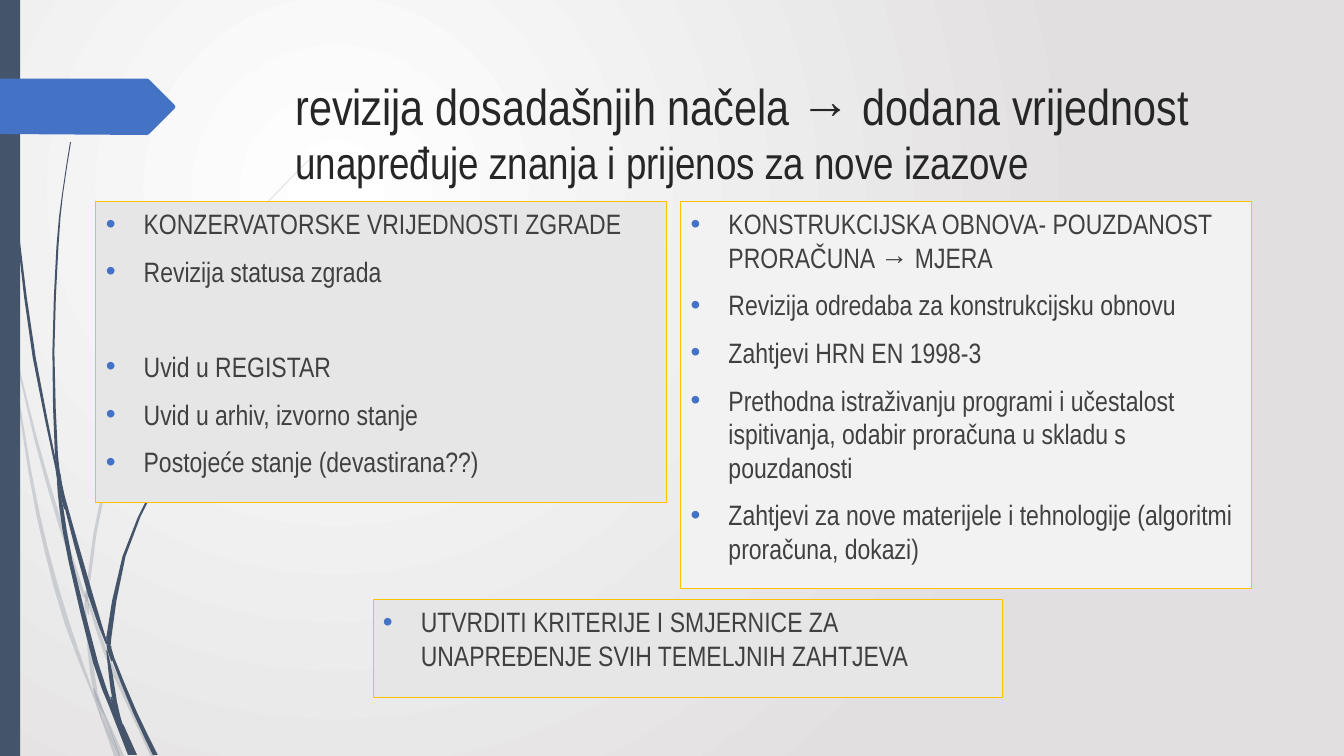
from lxml import etree
from pptx import Presentation
from pptx.dml.color import RGBColor
from pptx.enum import shapes, text
from pptx.oxml.ns import qn
from pptx.util import Inches, Pt

FONT = "Arial Narrow"
COLORS = {
    "navy": "44546A", "blue": "4472C4", "gold": "FFC000",
    "gray": "E7E6E6", "light": "F2F2F2", "title": "262626", "text": "404040",
    "center": "FFFFFF", "edge": "E1DFDF",
}
# Each blade of grass is a spine of (x, y, width) in inches.
PALE_BLADES = [
    [(0, 2.9, .04), (.07, 3.22, .03), (.11, 3.5, .01)],
    [(.14, 3.45, .01), (.35, 4.34, .03), (.6, 5.21, .04), (.84, 5.93, .03)],
    [(.88, 5.98, .02), (1.05, 6.48, .04), (1.25, 6.93, .04), (1.52, 7.51, .05)],
    [(1.05, 7.11, .01), (1.21, 7.51, .05)],
    [(.11, 3.5, .01), (.3, 4.7, .03), (.46, 5.46, .04), (.67, 6.2, .05),
     (.92, 6.88, .02), (1.01, 7.14, .01)],
    [(.84, 5.99, .01), (.89, 6.46, .04), (.95, 6.88, .04), (1.05, 7.11, .01)],
    [(3.12, 1.53, .01), (2.68, 1.98, .01), (2.28, 2.45, .01), (1.59, 3.49, .02),
     (1.08, 4.62, .03), (.87, 5.84, .03), (.88, 5.96, .01)],
    [(1.01, 7.14, .01), (1.16, 7.51, .05)],
    [(.85, 5.86, .01), (.86, 5.98, .04), (.88, 6.1, .01)],
    [(.93, 6.83, .01), (1.02, 7.1, .05), (1.19, 7.51, .01)],
]
DARK_BLADES = [
    [(.04, 0, .01), (.08, 1.1, .01), (.18, 2.33, .02), (.34, 3.55, .03),
     (.56, 4.65, .02), (.57, 4.81, .01)],
    [(.6, 4.72, .01), (.63, 4.93, .03), (.9, 5.91, .05), (1.06, 6.39, .02)],
    [(1.1, 6.41, .01), (1.12, 6.53, .03), (1.34, 7.07, .04), (1.54, 7.49, .05)],
    [(.57, 4.77, .01), (.61, 5.05, .04), (.7, 5.57, .04), (.95, 6.58, .05),
     (1.1, 7, .04), (1.17, 7.22, .01)],
    [(.7, 1.41, .01), (.62, 1.93, .01), (.57, 2.45, .02), (.53, 3.49, .02),
     (.56, 4.51, .03), (.6, 4.72, .01)],
    [(1.22, 7.19, .01), (1.34, 7.49, .04)],
    [(.55, 4.49, .01), (.59, 4.77, .04), (.64, 5.05, .01)],
    [(2.6, 3.44, .01), (2.31, 3.74, .01), (2.04, 4.06, .01), (1.57, 4.75, .02),
     (1.23, 5.52, .03), (1.08, 6.32, .05), (1.1, 6.41, .01)],
    [(1.17, 7.22, .01), (1.29, 7.49, .04)],
    [(1.06, 6.45, .01), (1.1, 6.7, .04), (1.14, 6.96, .04), (1.21, 7.19, .01)],
    [(1.06, 6.31, .01), (1.08, 6.43, .04), (1.11, 6.56, .01)],
    [(1.1, 6.91, .01), (1.19, 7.19, .06), (1.32, 7.49, .03)],
]
TAG = [(0, .78), (1.46, .78), (1.48, .79), (1.73, 1.04), (1.74, 1.06),
       (1.73, 1.08), (1.48, 1.33), (1.46, 1.34), (0, 1.33)]


def rgb(name):
    return RGBColor.from_string(COLORS[name])


def paint(sp, fill, line=None):
    sp.fill.solid()
    sp.fill.fore_color.rgb = rgb(fill)
    if line:
        sp.line.color.rgb = rgb(line)
        sp.line.width = Pt(0.75)
    else:
        sp.line.fill.background()


def place(sp, left, top, width, height):
    sp.left, sp.top = Inches(left), Inches(top)
    sp.width, sp.height = Inches(width), Inches(height)


def add_block(s, box, fill, line=None):
    sp = s.shapes.add_shape(shapes.MSO_SHAPE.RECTANGLE, *map(Inches, box))
    sp.shadow.inherit = False
    paint(sp, fill, line)
    return sp


def add_outline(s, points, fill):
    start, *rest = [(Inches(x), Inches(y)) for x, y in points]
    builder = s.shapes.build_freeform(*start)
    builder.add_line_segments(rest, close=True)
    sp = builder.convert_to_shape()
    sp.shadow.inherit = False
    paint(sp, fill)
    return sp


def add_run(p, words, size=20, color="text"):
    r = p.add_run()
    r.text = words
    r.font.name = FONT
    r.font.size = Pt(size)
    r.font.color.rgb = rgb(color)


def add_bullet(p):
    pPr = p._p.get_or_add_pPr()
    pPr.set("marL", str(Pt(27)))
    pPr.set("indent", str(-Pt(27)))
    clr = etree.SubElement(pPr, qn("a:buClr"))
    etree.SubElement(clr, qn("a:srgbClr"), val=COLORS["blue"])
    etree.SubElement(pPr, qn("a:buFont"), typeface="Arial")
    etree.SubElement(pPr, qn("a:buChar"), char="•")


def prepare_frame(sp):
    tf = sp.text_frame
    tf.word_wrap = True
    tf.auto_size = text.MSO_AUTO_SIZE.NONE
    tf.vertical_anchor = text.MSO_ANCHOR.TOP
    return tf


def fill_list(sp, items, gaps=None):
    """Write bulleted items; gaps maps an item index to its space before."""
    tf = prepare_frame(sp)
    for i, item in enumerate(items):
        p = tf.add_paragraph() if i else tf.paragraphs[0]
        add_bullet(p)
        p.alignment = text.PP_ALIGN.LEFT
        p.space_before = Pt((gaps or {}).get(i, 10) if i else 0)
        add_run(p, item)


def smooth(spine):
    """Add a Catmull-Rom midpoint between neighbours of the spine."""
    ends = [spine[0], *spine, spine[-1]]
    points = []
    for a, b, c, d in zip(ends, ends[1:], ends[2:], ends[3:]):
        points += [b, [(9 * (q + r) - p - w) / 16
                       for p, q, r, w in zip(a, b, c, d)]]
    return points + [spine[-1]]


def add_blade(s, spine, opacity=None):
    curve = smooth(spine)
    left = [(x - w / 2, y) for x, y, w in curve]
    right = [(x + w / 2, y) for x, y, w in reversed(curve)]
    sp = add_outline(s, left + right, "navy")
    if opacity:
        clr = sp._element.spPr.find(".//" + qn("a:srgbClr"))
        etree.SubElement(clr, qn("a:alpha"), val=str(opacity * 1000))


def set_background(s):
    fill = s.background.fill
    fill.gradient()
    for stop, name in zip(fill.gradient_stops, ("center", "edge")):
        stop.color.rgb = rgb(name)
    grad = s._element.find(".//" + qn("a:gradFill"))
    grad.remove(grad.find(qn("a:lin")))
    circle = etree.SubElement(grad, qn("a:path"), path="circle")
    etree.SubElement(circle, qn("a:fillToRect"),
                     l="50000", t="50000", r="100000", b="100000")


def add_decoration(s):
    for spine in PALE_BLADES:
        add_blade(s, spine, opacity=20)
    for spine in DARK_BLADES:
        add_blade(s, spine)
    add_block(s, (0, 0, 0.2, 7.5), "navy")
    add_outline(s, TAG, "blue")


def main():
    prs = Presentation()
    prs.slide_width, prs.slide_height = Inches(13.33), Inches(7.5)
    s = prs.slides.add_slide(prs.slide_layouts[3])
    title, heritage, structure = list(s.placeholders)
    set_background(s)
    add_decoration(s)
    for ph in (title, heritage, structure):
        s.shapes._spTree.append(ph._element)  # in front of the decoration

    place(title, 2.83, 0.69, 9.75, 1.4)
    p = prepare_frame(title).paragraphs[0]
    p.alignment = text.PP_ALIGN.LEFT
    add_run(p, "revizija dosadašnjih načela → dodana vrijednost", 36, "title")
    p.add_line_break()
    add_run(p, "unapređuje znanja i prijenos za nove izazove", 32, "title")

    place(heritage, 0.95, 2, 5.66, 2.99)
    paint(heritage, "gray", "gold")
    fill_list(heritage, [
        "KONZERVATORSKE VRIJEDNOSTI ZGRADE",
        "Revizija statusa zgrada",
        "Uvid u REGISTAR",
        "Uvid u arhiv, izvorno stanje",
        "Postojeće stanje (devastirana??)",
    ], gaps={2: 44})

    place(structure, 6.75, 2, 5.66, 3.84)
    paint(structure, "light", "gold")
    fill_list(structure, [
        "KONSTRUKCIJSKA OBNOVA- POUZDANOST PRORAČUNA → MJERA",
        "Revizija odredaba za konstrukcijsku obnovu",
        "Zahtjevi HRN EN 1998-3",
        "Prethodna istraživanju programi i učestalost ispitivanja, "
        "odabir proračuna u skladu s pouzdanosti",
        "Zahtjevi za nove materijele i tehnologije (algoritmi proračuna, dokazi)",
    ])

    criteria = add_block(s, (3.7, 5.95, 6.24, 0.97), "gray", "gold")
    fill_list(criteria, [
        "UTVRDITI KRITERIJE I SMJERNICE ZA UNAPREĐENJE SVIH TEMELJNIH ZAHTJEVA"])
    prs.save("out.pptx")


if __name__ == "__main__":
    main()
